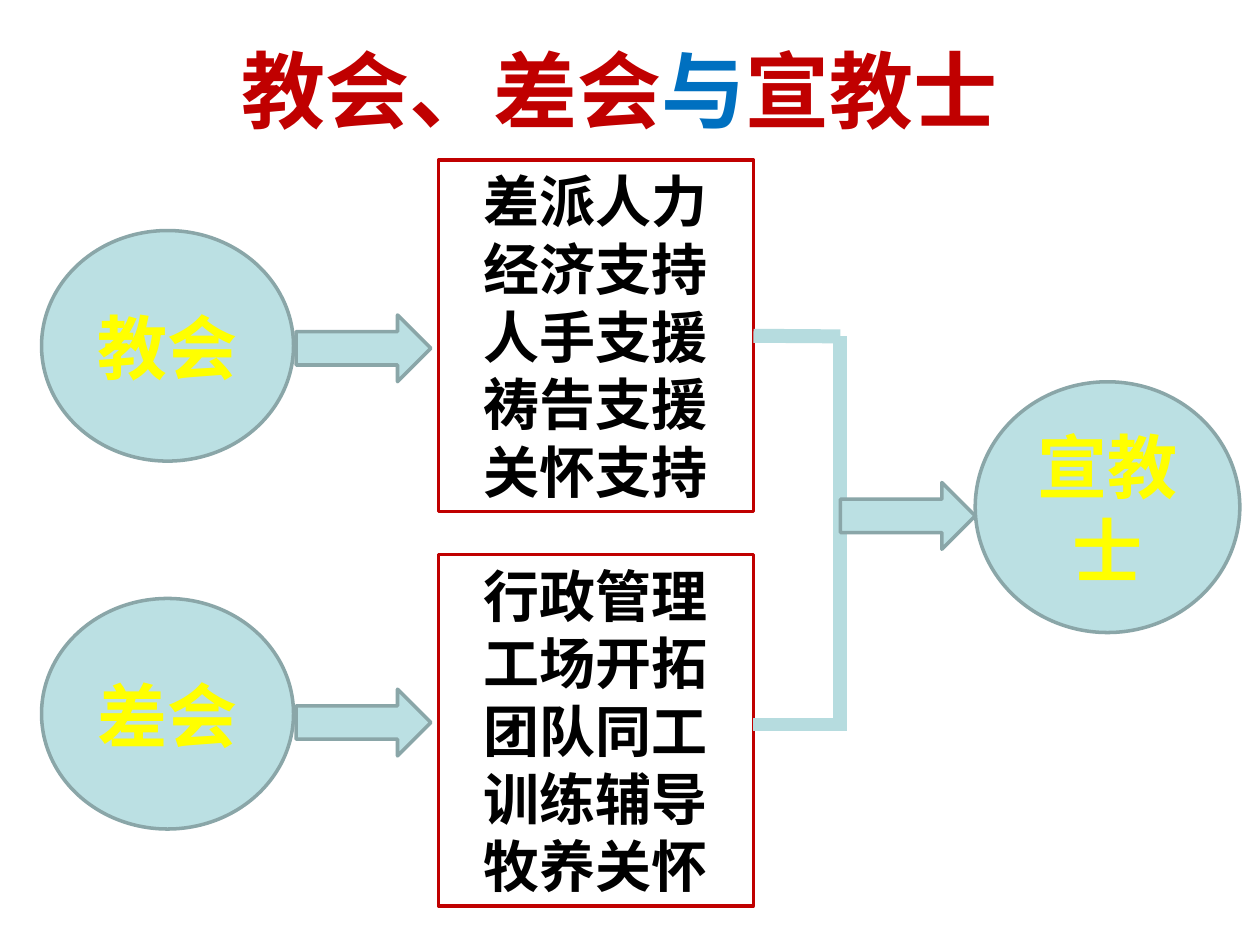
from pptx import Presentation
from pptx.dml.color import RGBColor
from pptx.enum.shapes import MSO_CONNECTOR, MSO_SHAPE
from pptx.enum.text import MSO_ANCHOR, PP_ALIGN
from pptx.oxml.ns import qn
from pptx.util import Inches, Pt
from lxml.etree import SubElement

THEME = {
    "font": "Noto Sans CJK SC",
    "red": "C00000", "blue": "0070C0", "yellow": "FFFF00", "black": "000000",
    "fill": "BBE0E3", "outline": "8AA6A8", "bracket": "B6DCDF",
    "title": 48, "circle": 40, "list": 32,
    "line": 2, "bracket_line": 8, "leading": 1.21,
}

# Content
TITLE = [("教会、差会", "red"), ("与", "blue"), ("宣教士", "red")]
SENDERS = [
    ("教会", ["差派人力", "经济支持", "人手支援", "祷告支援", "关怀支持"]),
    ("差会", ["行政管理", "工场开拓", "团队同工", "训练辅导", "牧养关怀"]),
]
RECEIVER = "宣教士"

# Columns and rows, in inches
CIRCLE_LEFT, ARROW_LEFT, LIST_LEFT, BRACKET_X, RECEIVER_LEFT = 0.33, 2.35, 3.48, 6.67, 7.74
ROWS = [  # circle top, arrow top, list top, bracket height
    (1.83, 2.50, 1.27, 2.67),
    (4.75, 5.47, 4.40, 5.75),
]
CIRCLE_SIZE, RECEIVER_SIZE = (2, 1.83), (2.1, 1.99)
ARROW_SIZE, LIST_SIZE = (1.07, 0.53), (2.5, 2.79)


def color(name):
    return RGBColor.from_string(THEME[name])


def style_text(para, size, color_names):
    para.alignment = PP_ALIGN.CENTER
    para.line_spacing = Pt(round(THEME[size] * THEME["leading"], 1))
    for span, name in zip(para.runs, color_names):
        span.font.size = Pt(THEME[size])
        span.font.bold = True
        span.font.name = THEME["font"]
        span.font.color.rgb = color(name)
        east_asian = SubElement(span.font._element, qn("a:ea"))
        east_asian.set("typeface", THEME["font"])


def add_part(page, kind, left, top, size, fill="fill", outline="outline"):
    part = page.shapes.add_shape(kind, Inches(left), Inches(top), *map(Inches, size))
    part.shadow.inherit = False
    if fill:
        part.fill.solid()
        part.fill.fore_color.rgb = color(fill)
    else:
        part.fill.background()
    part.line.color.rgb = color(outline)
    part.line.width = Pt(THEME["line"])
    return part


def add_circle(page, text, left, top, size):
    circle = add_part(page, MSO_SHAPE.OVAL, left, top, size)
    frame = circle.text_frame
    frame.text = text
    frame.word_wrap = True
    frame.vertical_anchor = MSO_ANCHOR.MIDDLE
    style_text(frame.paragraphs[0], "circle", ["yellow"])


def add_list(page, items, left, top):
    box = add_part(page, MSO_SHAPE.RECTANGLE, left, top, LIST_SIZE, None, "red")
    frame = box.text_frame
    frame.text = "\n".join(items)
    frame.word_wrap = True
    frame.vertical_anchor = MSO_ANCHOR.TOP
    for para in frame.paragraphs:
        style_text(para, "list", ["black"])
    return box


def add_line(page, x1, y1, x2, y2):
    line = page.shapes.add_connector(MSO_CONNECTOR.STRAIGHT, *map(Inches, (x1, y1, x2, y2)))
    line.line.color.rgb = color("bracket")
    line.line.width = Pt(THEME["bracket_line"])
    SubElement(line._element.spPr, qn("a:effectLst"))
    return line


def main():
    deck = Presentation()
    deck.slide_width, deck.slide_height = Inches(10), Inches(7.5)
    page = deck.slides.add_slide(deck.slide_layouts[6])

    # Title
    title = page.shapes.add_textbox(*map(Inches, (0.25, 0.25, 9.33, 1.25)))
    title.text_frame.word_wrap = True
    para = title.text_frame.paragraphs[0]
    for text, _ in TITLE:
        para.add_run().text = text
    style_text(para, "title", [name for _, name in TITLE])

    # Senders, their arrows and their tasks
    boxes = []
    for (name, items), (circle_top, arrow_top, list_top, _) in zip(SENDERS, ROWS):
        add_circle(page, name, CIRCLE_LEFT, circle_top, CIRCLE_SIZE)
        add_part(page, MSO_SHAPE.RIGHT_ARROW, ARROW_LEFT, arrow_top, ARROW_SIZE)
        boxes.append(add_list(page, items, LIST_LEFT, list_top))

    # Bracket joining both lists
    list_right = LIST_LEFT + LIST_SIZE[0]
    upper, lower = (row[3] for row in ROWS)
    arm = add_line(page, list_right, upper, BRACKET_X, upper)
    arm.begin_connect(boxes[0], 3)
    add_line(page, BRACKET_X, upper, BRACKET_X, lower + 0.05)
    add_line(page, BRACKET_X, lower, list_right, lower)

    # Receiver
    add_part(page, MSO_SHAPE.RIGHT_ARROW, BRACKET_X, 3.83, ARROW_SIZE)
    add_circle(page, RECEIVER, RECEIVER_LEFT, 3.03, RECEIVER_SIZE)

    deck.save("out.pptx")


if __name__ == "__main__":
    main()
